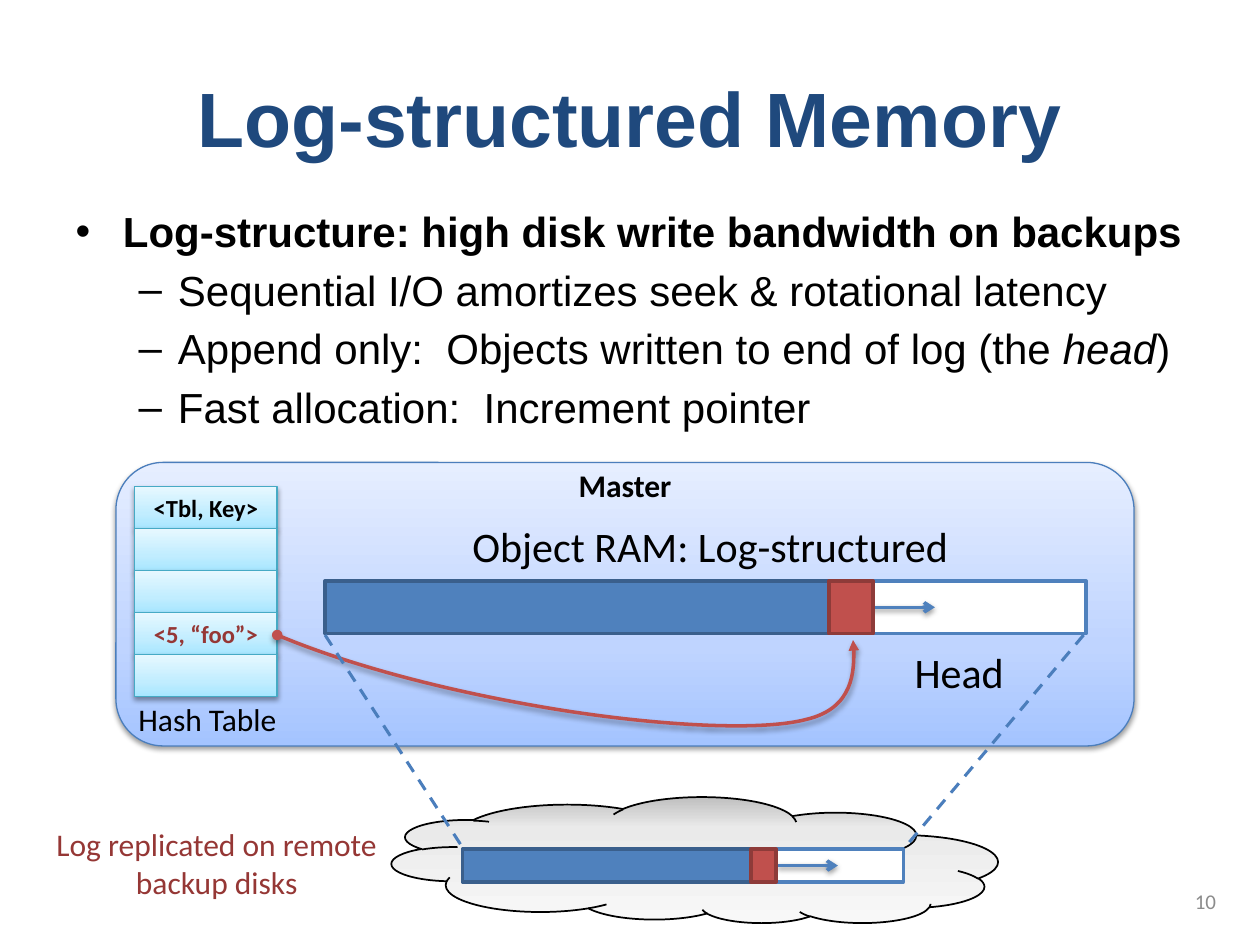
from lxml import etree
from pptx import Presentation
from pptx.dml.color import RGBColor
from pptx.enum import dml, shapes, text
from pptx.oxml import parse_xml
from pptx.oxml.ns import nsdecls, qn
from pptx.util import Inches, Pt

TITLE = "Log-structured Memory"
# (level, [(text, format), ...])
BULLETS = [
    (0, [("Log-structure: high disk write bandwidth on backups", {"bold": True})]),
    (1, [("Sequential I/O amortizes seek & rotational latency", {})]),
    (1, [("Append only:  Objects written to end of log (the ", {}),
         ("head", {"italic": True}), (")", {})]),
    (1, [("Fast allocation:  Increment pointer", {})]),
]
BLACK, WHITE, BLUE, RED = "000000", "FFFFFF", "4F81BD", "C0504D"
DARK_BLUE, DARK_RED, EDGE_BLUE, TEXT_RED = "3A5F8C", "8E3B39", "4B7EBC", "953735"

HASH_ROWS = [("<Tbl, Key>", BLACK), None, None, ("<5, “foo”>", TEXT_RED), None]
HASH_LEFT, HASH_TOP, HASH_WIDTH, HASH_ROW = 1.07, 3.86, 1.13, 1 / 3

# white frame, written part and head as (left, width); arrow as (from, to)
LOGS = {
    "memory": dict(top=4.61, height=0.42, frame=(2.6, 6.02), written=(2.58, 4),
                   head=(6.58, 0.35), arrow=(6.58, 7.42)),
    "backup": dict(top=6.74, height=0.26, frame=(3.68, 3.49), written=(3.67, 2.32),
                   head=(5.96, 0.2), arrow=(6.17, 6.65)),
}
ZOOM_LINES = [((2.58, 5.04), (3.68, 6.74)), ((8.6, 5.04), (7.17, 6.74))]
# start, then two control points and an end point for each curve
POINTER = [(2.2, 5.04),
           (2.89, 5.33), (3.78, 5.53), (4.48, 5.64),
           (5.18, 5.75), (6.02, 5.81), (6.4, 5.71),
           (6.78, 5.62), (6.79, 5.19), (6.77, 5.08)]

MASTER_GRADIENT = [(0, "A4C4FF"), (35, "BFD4FF"), (100, "E6EEFF")]
HASH_GRADIENT = [(0, "A7E6FF"), (35, "C1EDFF"), (100, "E7F8FF")]
CLOUD_GRADIENT = [(0, "F8F8F8"), (76, "EAEAEA"), (100, "C0C0C0")]

presentation = Presentation()
presentation.slide_width, presentation.slide_height = Inches(10), Inches(7.5)
slide = presentation.slides.add_slide(presentation.slide_layouts[1])


def color(hex_string):
    return RGBColor.from_string(hex_string)


def place(shape, left, top, width, height):
    shape.left, shape.top = Inches(left), Inches(top)
    shape.width, shape.height = Inches(width), Inches(height)


def add_run(paragraph, words, size=18, font="Calibri", ink=BLACK, bold=False, italic=False):
    run = paragraph.add_run()
    run.text = words
    run.font.size, run.font.name = Pt(size), font
    run.font.bold, run.font.italic = bold, italic
    run.font.color.rgb = color(ink)


def write(shape, words, align="LEFT", anchor="TOP", wrap=True, inset=None, **style):
    """Fill a shape with text, one paragraph for each line."""
    frame = shape.text_frame
    frame.word_wrap = wrap
    frame.vertical_anchor = getattr(text.MSO_ANCHOR, anchor)
    if inset is not None:
        frame.margin_left = frame.margin_right = Inches(inset)
        frame.margin_top = frame.margin_bottom = Inches(inset)
    for index, line in enumerate(words.split("\n")):
        paragraph = frame.add_paragraph() if index else frame.paragraphs[0]
        paragraph.alignment = getattr(text.PP_ALIGN, align)
        add_run(paragraph, line, **style)


def add_label(words, left, top, width, height, **style):
    box = slide.shapes.add_textbox(*map(Inches, (left, top, width, height)))
    write(box, words, **style)


def set_effects(shape, shadow):
    """Drop the theme shadow and, if asked, add a soft one below the shape."""
    properties = shape._element.spPr
    for old in properties.findall(qn("a:effectLst")):
        properties.remove(old)
    effects = etree.SubElement(properties, qn("a:effectLst"))
    if shadow:
        effects.append(parse_xml(
            f'<a:outerShdw {nsdecls("a")} blurRad="{Pt(3.1)}" dist="{Pt(1.6)}" dir="5400000" '
            f'rotWithShape="0"><a:srgbClr val="{BLACK}"><a:alpha val="38000"/></a:srgbClr>'
            '</a:outerShdw>'))


def set_line(shape, ink, width, head=None, tail=None, dash=False):
    shape.line.color.rgb = color(ink)
    shape.line.width = Pt(width)
    if dash:
        shape.line.dash_style = dml.MSO_LINE.DASH
    outline = shape._element.spPr.find(qn("a:ln"))
    for tag, kind in (("a:headEnd", head), ("a:tailEnd", tail)):
        if kind:
            etree.SubElement(outline, qn(tag), type=kind)


def set_gradient(shape, stops, angle):
    shape.fill.gradient()
    gradient = shape._element.spPr.find(qn("a:gradFill"))
    stop_list = gradient.find(qn("a:gsLst"))
    for old in list(stop_list):
        stop_list.remove(old)
    for position, hex_string in stops:
        stop = etree.SubElement(stop_list, qn("a:gs"), pos=str(position * 1000))
        etree.SubElement(stop, qn("a:srgbClr"), val=hex_string)
    gradient.find(qn("a:lin")).set("ang", str(angle * 60000))


def add_block(kind, left, top, width, height, fill, line, line_width=2, angle=270, shadow=False):
    """Add a preset shape; fill is a colour or a list of gradient stops."""
    shape = slide.shapes.add_shape(getattr(shapes.MSO_SHAPE, kind),
                                   *map(Inches, (left, top, width, height)))
    if isinstance(fill, str):
        shape.fill.solid()
        shape.fill.fore_color.rgb = color(fill)
    else:
        set_gradient(shape, fill, angle)
    set_line(shape, line, line_width)
    set_effects(shape, shadow)
    return shape


def add_line(start, end, ink, width, shadow=False, **ends):
    connector = slide.shapes.add_connector(shapes.MSO_CONNECTOR.STRAIGHT,
                                           *map(Inches, (*start, *end)))
    set_line(connector, ink, width, **ends)
    set_effects(connector, shadow)


def add_log(top, height, frame, written, head, arrow):
    def bar(span, fill, line):
        add_block("RECTANGLE", span[0], top, span[1], height, fill, line)

    middle = top + height / 2
    bar(frame, WHITE, BLUE)
    add_line((arrow[0], middle), (arrow[1], middle), BLUE, 2, shadow=True, tail="arrow")
    bar(written, BLUE, DARK_BLUE)
    bar(head, RED, DARK_RED)


def add_curve(points):
    """Draw a freeform through the points, then join each three as a cubic curve."""
    start, *others = [(Inches(x), Inches(y)) for x, y in points]
    builder = slide.shapes.build_freeform(*start)
    builder.add_line_segments(others, close=False)
    curve = builder.convert_to_shape()
    segments = list(curve._element.iter(qn("a:lnTo")))
    outline = segments[0].getparent()
    for first in range(0, len(segments), 3):
        cubic = etree.SubElement(outline, qn("a:cubicBezTo"))
        for segment in segments[first:first + 3]:
            cubic.append(segment[0])
            outline.remove(segment)
    curve.fill.background()
    return curve


title, body = slide.placeholders[0], slide.placeholders[1]
place(title, 0.5, 0.3, 9, 1.25)
write(title, TITLE, align="CENTER", anchor="MIDDLE", size=44, font="Arial",
      ink="1F497D", bold=True)

place(body, 0.5, 1.58, 9, 4.95)
for index, (level, runs) in enumerate(BULLETS):
    paragraph = body.text_frame.add_paragraph() if index else body.text_frame.paragraphs[0]
    paragraph.level = level
    for words, style in runs:
        add_run(paragraph, words, size=24, font="Arial", **style)

add_label("10", 7.42, 6.95, 2.33, 0.4, align="RIGHT", anchor="MIDDLE", size=12, ink="8C8C8C")

add_block("ROUNDED_RECTANGLE", 0.92, 3.67, 8.08, 2.25, MASTER_GRADIENT, EDGE_BLUE, 0.75,
          shadow=True)
add_label("Master", 0.92, 3.7, 8.08, 0.3, align="CENTER", inset=0, bold=True)

for row, entry in enumerate(HASH_ROWS):
    cell = add_block("RECTANGLE", HASH_LEFT, HASH_TOP + row * HASH_ROW, HASH_WIDTH, HASH_ROW,
                     HASH_GRADIENT, "46AAC5", 0.75, shadow=True)
    if entry:
        write(cell, entry[0], align="CENTER", anchor="MIDDLE", size=14, ink=entry[1], bold=True)
add_label("Hash Table", 1, 5.51, 1.37, 0.4)

add_log(**LOGS["memory"])
add_label("Object RAM: Log-structured", 3.65, 4.08, 4.01, 0.5, wrap=False, size=24)
add_label("Head", 7.16, 5.08, 0.92, 0.5, wrap=False, size=24)
pointer = add_curve(POINTER)
set_line(pointer, RED, 2, head="oval", tail="triangle")
set_effects(pointer, shadow=True)

cloud = add_block("CLOUD", 3.11, 6.33, 4.81, 1, CLOUD_GRADIENT, BLACK, 1, angle=90)
cloud._element.spPr.find(qn("a:xfrm")).set("flipV", "1")
add_log(**LOGS["backup"])
for start, end in ZOOM_LINES:
    add_line(start, end, EDGE_BLUE, 1.75, dash=True)
add_label("Log replicated on remote\nbackup disks", 0.33, 6.5, 2.78, 0.71, align="CENTER",
          wrap=False, ink=TEXT_RED)

presentation.save("out.pptx")
